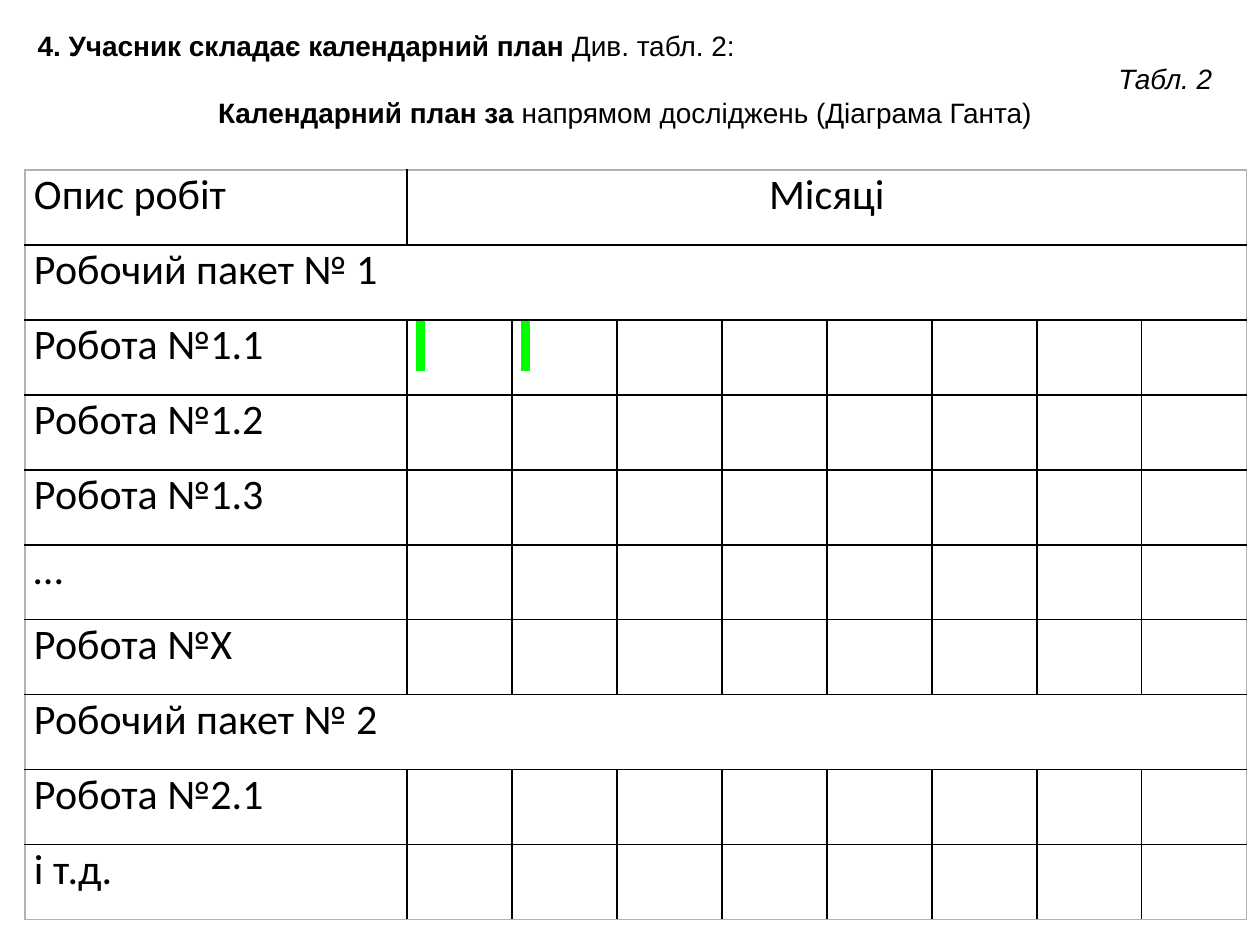
"""Build a slide with a work schedule table in the form of a Gantt chart."""
import lxml.etree
import pptx
import pptx.dml.color
import pptx.enum.text
import pptx.oxml
import pptx.oxml.ns
import pptx.util

EMU_PER_PX = 914400 / 126
ALIGN = pptx.enum.text.PP_ALIGN
BLACK, EDGE_GREY, MARK_GREEN = "000000", "B2B2B2", "00FF00"
MONTHS = 8
HEADER = "Опис робіт"
PACKAGES = ("Робочий пакет № 1", "Робочий пакет № 2")
ROWS = [HEADER, PACKAGES[0], "Робота №1.1", "Робота №1.2", "Робота №1.3", "…",
        "Робота №Х", PACKAGES[1], "Робота №2.1", "і т.д."]
MARKED_CELLS = [(2, 1), (2, 2)]
HEADING = [
    (ALIGN.LEFT, False, [("4. Учасник складає календарний план", True), (" Див. табл. 2:", False)]),
    (ALIGN.RIGHT, True, [("Табл. 2", False)]),
    (ALIGN.CENTER, False, [("Календарний план за ", True),
                           ("напрямом досліджень (Діаграма Ганта)", False)]),
]


def px(length):
    return pptx.util.Emu(round(length * EMU_PER_PX))


def color(hex_string):
    return pptx.dml.color.RGBColor.from_string(hex_string)


presentation = pptx.Presentation()
presentation.slide_width, presentation.slide_height = px(1260), px(945)
slide = presentation.slides.add_slide(presentation.slide_layouts[5])

title = slide.shapes.title
title.left, title.top, title.width, title.height = px(25), px(22), px(1200), px(149)
title.text_frame.vertical_anchor = pptx.enum.text.MSO_ANCHOR.TOP
title.text_frame.auto_size = pptx.enum.text.MSO_AUTO_SIZE.NONE
for index, (alignment, italic, parts) in enumerate(HEADING):
    paragraph = title.text_frame.paragraphs[0] if index == 0 else title.text_frame.add_paragraph()
    paragraph.alignment = alignment
    paragraph.font.name = "Arial"
    paragraph.font.size = pptx.util.Pt(16)
    paragraph.font.italic = italic
    paragraph.font.color.rgb = color(BLACK)
    for text, bold in parts:
        run = paragraph.add_run()
        run.text = text
        run.font.bold = bold

table = slide.shapes.add_table(
    len(ROWS), MONTHS + 1, px(25), px(170), px(1222), px(750)).table
table.first_row = table.horz_banding = False
for index, column in enumerate(table.columns):
    column.width = px(105 if index else 382)
for row in table.rows:
    row.height = px(75)

for row_index, label in enumerate(ROWS):
    if label == HEADER or label in PACKAGES:
        first_merged = 1 if label == HEADER else 0
        table.cell(row_index, first_merged).merge(table.cell(row_index, MONTHS))
    for column_index in range(MONTHS + 1):
        cell = table.cell(row_index, column_index)
        cell.margin_left = cell.margin_right = px(9)
        cell.margin_top = cell.margin_bottom = 0
        outer_edges = {"lnL": column_index == 0,
                       "lnR": column_index == MONTHS or cell.is_merge_origin,
                       "lnT": row_index == 0,
                       "lnB": row_index == len(ROWS) - 1}
        for tag, is_outer in outer_edges.items():
            line = lxml.etree.SubElement(
                cell._tc.get_or_add_tcPr(), pptx.oxml.ns.qn(f"a:{tag}"), w="12700")
            fill = lxml.etree.SubElement(line, pptx.oxml.ns.qn("a:solidFill"))
            lxml.etree.SubElement(fill, pptx.oxml.ns.qn("a:srgbClr"),
                                  val=EDGE_GREY if is_outer else BLACK)
        cell.fill.background()

        is_marked = (row_index, column_index) in MARKED_CELLS
        text = label if column_index == 0 else " " if is_marked else ""
        paragraph = cell.text_frame.paragraphs[0]
        if (row_index, column_index) == (0, 1):
            text = "Місяці"
            paragraph.alignment = ALIGN.CENTER
        if not text:
            continue
        run = paragraph.add_run()
        run.text = text
        run.font.size = pptx.util.Pt(24)
        run.font.color.rgb = color(BLACK)
        if is_marked:
            highlight = lxml.etree.SubElement(run.font._element, pptx.oxml.ns.qn("a:highlight"))
            lxml.etree.SubElement(highlight, pptx.oxml.ns.qn("a:srgbClr"), val=MARK_GREEN)
        run.font.name = "Calibri"

presentation.save("out.pptx")
